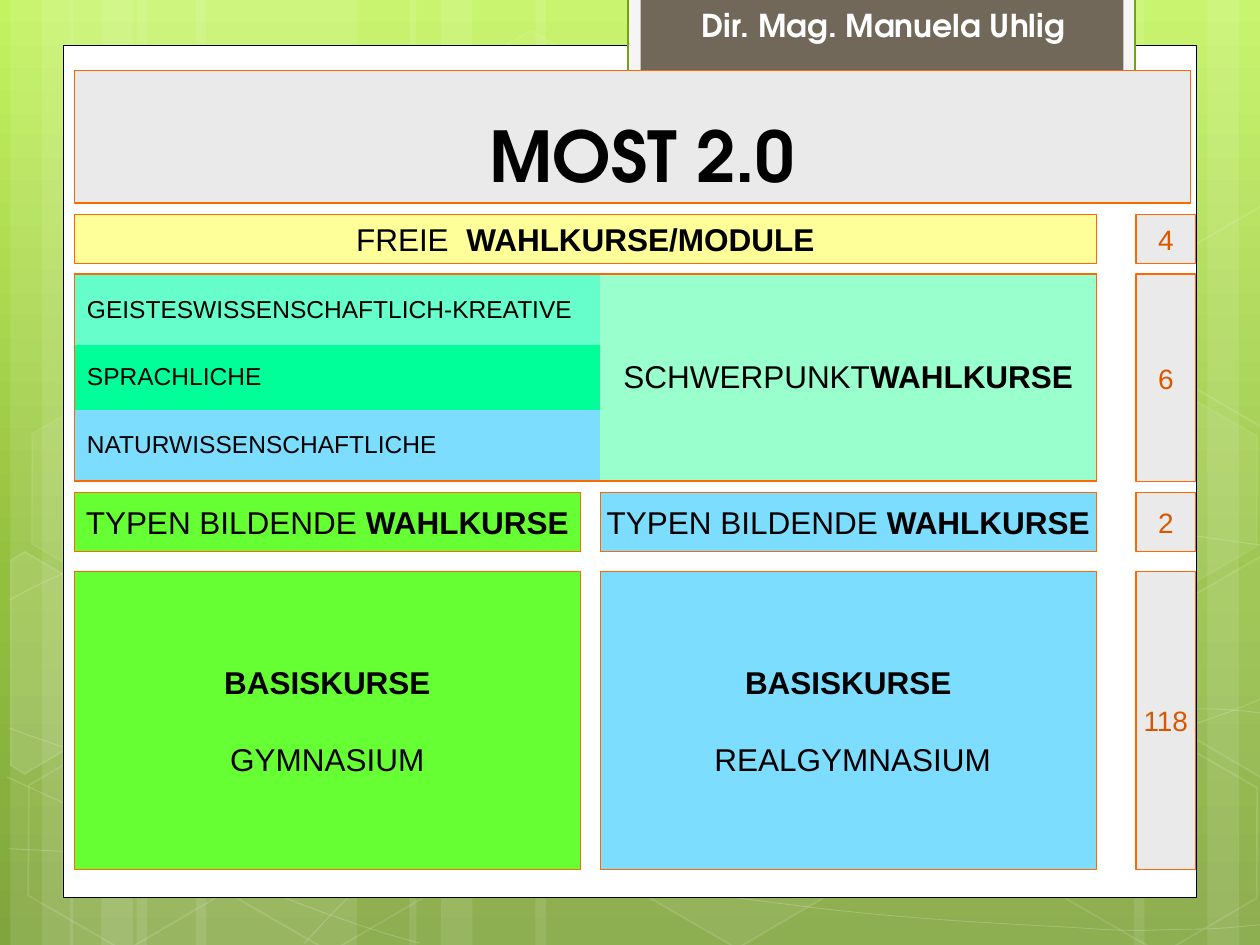
from copy import deepcopy
from math import cos, radians, sin

from lxml.etree import SubElement
from pptx import Presentation
from pptx.dml.color import RGBColor
from pptx.enum.shapes import MSO_SHAPE as SHAPE
from pptx.enum.text import MSO_ANCHOR as ANCHOR, MSO_AUTO_SIZE as AUTO_SIZE, PP_ALIGN as ALIGN
from pptx.oxml.ns import qn
from pptx.util import Pt

COLORS = {
    "white": "FFFFFF", "black": "000000", "orange": "FF6801", "rust": "D85700",
    "grey": "EAEAEA", "tab": "F5F5F5", "tab_line": "74A510", "brown": "71685A",
    "green": "66FF33", "blue": "7DDDFF", "yellow": "FFFF99", "mint": "99FFCC",
    "aqua": "66FFCC", "emerald": "00FF99",
    "sky_top": "C3F35F", "sky_middle": "93BF3F", "sky_bottom": "81A53E",
}
BACKGROUND_STOPS = [(0, "sky_top"), (0.62, "sky_middle"), (1, "sky_bottom")]
BODY_FONT, TITLE_FONT = "Arial", "TeX Gyre Adventor"

# Left, width
STREAKS = [(78, 126), (6, 36), (24, 60), (112, 126), (40, 36), (58, 60),
           (528, 126), (690, 36), (648, 60), (306, 222), (234, 36), (252, 60)]
# Start point followed by triples of Bezier points
CURVES = [
    [(5, 485), (44, 487), (83, 489), (137, 488), (191, 487), (258, 486), (330, 479),
     (402, 472), (504, 458), (570, 444), (636, 430), (703, 409), (725, 397)],
    [(5, 343), (26, 332), (47, 321), (87, 310), (128, 300), (186, 284), (250, 279),
     (314, 274), (392, 273), (471, 279), (550, 284), (682, 307), (725, 312)],
    [(4, 444), (91, 484), (178, 523), (240, 539)],
    [(5, 416), (27, 424), (50, 432), (92, 444), (134, 454), (197, 472), (257, 485),
     (317, 497), (392, 510), (452, 517), (512, 525), (576, 528), (614, 530),
     (652, 533), (662, 531), (680, 531), (699, 531), (712, 529), (725, 528)],
    [(174, 539), (187, 525), (200, 510), (217, 498), (235, 485), (259, 470), (279, 460),
     (300, 450), (312, 446), (338, 438), (364, 431), (413, 421), (438, 416),
     (464, 411), (467, 411), (490, 410), (512, 408), (547, 405), (572, 405),
     (597, 404), (638, 405), (682, 405), (699, 405), (711, 406), (724, 408)],
]
TILT = 30
# Left, top, fill opacity, line opacity
HEXAGONS = [(240.5, 26, 4, 8), (358, 424, 6, 12), (8, 425.5, 0, 12), (10, 224.5, 7, 8),
            (125.5, 426, 0, 12), (542, 326, 10, 12), (600.5, 427, 0, 12), (600.5, 226, 7, 8)]
# Outline as seen after tilting, centre of the tilt, fill opacity
CUT_HEXAGONS = [
    ([(6, 320), (14, 315), (69, 347), (68, 410), (14, 442), (6, 437)], (26, 385), 10),
    ([(667, 349), (721, 317.5), (726, 321), (726, 441), (721, 444), (667, 412.5)],
     (709, 374.5), 4),
    ([(667, 149), (721, 117.5), (727, 121), (726, 241), (721, 244), (667, 212.5)],
     (709, 173.5), 0),
]

LEFT, LEFT_WIDTH = 42.5, 289.2
RIGHT, RIGHT_WIDTH = 343, 283.5
FULL_WIDTH = RIGHT + RIGHT_WIDTH - LEFT
POINTS_LEFT, POINTS_WIDTH = 649.2, 34
# Top, height
FREE_ROW, FOCUS_ROW, TYPE_ROW, BASE_ROW = (122.5, 28.2), (156.6, 118.6), (281.3, 34), (326.6, 170.2)


def rgb(color):
    return RGBColor.from_string(COLORS[color])


def set_alpha(fill, parent, opacity):
    """Give a solid fill, found below its parent element, an opacity in percent."""
    fill.solid()
    fill.fore_color.rgb = rgb("white")
    solid = parent.find(qn("a:solidFill"))
    SubElement(solid[0], qn("a:alpha")).set("val", str(opacity * 1000))


def format_faint(shape, fill_opacity=0, line_opacity=0, line_width=1):
    shape.shadow.inherit = False
    properties = shape._element.spPr
    if fill_opacity:
        set_alpha(shape.fill, properties, fill_opacity)
    else:
        shape.fill.background()
    if line_opacity:
        shape.line.width = Pt(line_width)
        set_alpha(shape.line.fill, properties.find(qn("a:ln")), line_opacity)
    else:
        shape.line.fill.background()


def add_outline(slide, points, close):
    start, *rest = [(Pt(x), Pt(y)) for x, y in points]
    builder = slide.shapes.build_freeform(*start)
    builder.add_line_segments(rest, close=close)
    return builder.convert_to_shape()


def add_curve(slide, controls):
    """Draw an outline through the controls, then turn each three lines into one Bezier."""
    curve = add_outline(slide, controls, close=False)
    outline = curve._element.find(".//" + qn("a:path"))
    lines = outline.findall(qn("a:lnTo"))
    for first in range(0, len(lines), 3):
        bezier = SubElement(outline, qn("a:cubicBezTo"))
        for line in lines[first:first + 3]:
            bezier.append(line[0])
            outline.remove(line)
    format_faint(curve, line_opacity=20, line_width=0.5)


def add_cut_hexagon(slide, points, centre, fill_opacity):
    cx, cy = centre
    c, s = cos(radians(TILT)), sin(radians(TILT))
    upright = [(cx + (x - cx) * c + (y - cy) * s, cy - (x - cx) * s + (y - cy) * c)
               for x, y in points]
    hexagon = add_outline(slide, upright, close=True)
    hexagon.rotation = TILT
    format_faint(hexagon, fill_opacity, 12)


def add_background(slide):
    fill = slide.background.fill
    fill.gradient()
    fill.gradient_angle = 270
    stop_list = slide._element.find(".//" + qn("a:gsLst"))
    stop_list.append(deepcopy(stop_list[-1]))
    for stop, (position, color) in zip(fill.gradient_stops, BACKGROUND_STOPS):
        stop.position = position
        stop.color.rgb = rgb(color)


def add_decoration(slide):
    shapes = slide.shapes
    for left, width in STREAKS:
        streak = shapes.add_shape(SHAPE.RECTANGLE, Pt(left), 0, Pt(width), Pt(540))
        format_faint(streak, fill_opacity=10)
    for controls in CURVES:
        add_curve(slide, controls)
    for left, top, fill_opacity, line_opacity in HEXAGONS:
        hexagon = shapes.add_shape(SHAPE.HEXAGON, Pt(left), Pt(top), Pt(126), Pt(109.5))
        hexagon.adjustments[0] = 0.285
        hexagon.rotation = TILT
        format_faint(hexagon, fill_opacity, line_opacity)
    for cut_hexagon in CUT_HEXAGONS:
        add_cut_hexagon(slide, *cut_hexagon)


def write(frame, *lines, size=18, font=BODY_FONT, color="black", align=ALIGN.CENTER, gap=0):
    """Write lines, each a list of (text, bold) runs, with a gap between them."""
    for index, runs in enumerate(lines):
        paragraph = frame.add_paragraph() if index else frame.paragraphs[0]
        paragraph.alignment = align
        if index and gap:
            paragraph.space_before = Pt(gap)
        for text, bold in runs:
            run = paragraph.add_run()
            run.text = text
            run.font.name, run.font.size, run.font.bold = font, Pt(size), bold
            run.font.color.rgb = rgb(color)


def paint(shape, fill, line=None, line_width=0.75):
    shape.fill.solid()
    shape.fill.fore_color.rgb = rgb(fill)
    if line:
        shape.line.color.rgb = rgb(line)
        shape.line.width = Pt(line_width)
    else:
        shape.line.fill.background()


def add_box(slide, left, top, width, height, fill, *lines, line="orange", line_width=0.75, **style):
    box = slide.shapes.add_shape(SHAPE.RECTANGLE, Pt(left), Pt(top), Pt(width), Pt(height))
    box.shadow.inherit = False
    paint(box, fill, line, line_width)
    box.text_frame.word_wrap = False
    box.text_frame.vertical_anchor = ANCHOR.MIDDLE
    write(box.text_frame, *lines, **style)


def add_frame(slide):
    add_box(slide, 36, 26, 648, 487, "white", line="black", line_width=0.5)
    add_box(slide, 359, -1.5, 289.5, 54.5, "tab", line="tab_line", line_width=1.25)
    add_box(slide, 366, -1.5, 276, 49, "brown", line=None)


def add_title(slide):
    title = slide.shapes.title
    title.left, title.top, title.width, title.height = Pt(LEFT), Pt(40.2), Pt(638), Pt(75.9)
    paint(title, "grey", "orange")
    title.text_frame.auto_size = AUTO_SIZE.NONE
    title.text_frame.vertical_anchor = ANCHOR.BOTTOM
    write(title.text_frame, [(" MOST 2.0", True)], size=40, font=TITLE_FONT)
    slide.shapes._spTree.append(title._element)  # in front of the white panel


def set_border(cell, side, visible):
    border = SubElement(cell._tc.get_or_add_tcPr(), qn("a:ln" + side), w=str(Pt(1)))
    if visible:
        solid = SubElement(border, qn("a:solidFill"))
        SubElement(solid, qn("a:srgbClr"), val=COLORS["orange"])
    else:
        SubElement(border, qn("a:noFill"))


def add_focus_table(slide):
    subjects = [("GEISTESWISSENSCHAFTLICH-KREATIVE", "aqua", 40.8), ("SPRACHLICHE", "emerald", 36.6),
                ("NATURWISSENSCHAFTLICHE", "blue", 40.8)]
    top, height = FOCUS_ROW
    table = slide.shapes.add_table(3, 2, Pt(LEFT), Pt(top), Pt(FULL_WIDTH), Pt(height)).table
    table.columns[0].width, table.columns[1].width = Pt(RIGHT - LEFT), Pt(RIGHT_WIDTH)
    for index, (subject, fill, row_height) in enumerate(subjects):
        table.rows[index].height = Pt(row_height)
        for column, color in enumerate((fill, "mint")):
            cell = table.cell(index, column)
            edges = {"L": column == 0, "R": column == 1, "T": index == 0, "B": index == 2}
            for side, visible in edges.items():
                set_border(cell, side, visible)
            cell.fill.solid()
            cell.fill.fore_color.rgb = rgb(color)
            cell.vertical_anchor = ANCHOR.MIDDLE
        write(table.cell(index, 0).text_frame, [(subject, False)], size=14, align=ALIGN.LEFT)
    write(table.cell(1, 1).text_frame, [("SCHWERPUNKT", False), ("WAHLKURSE", True)])


def add_courses(slide):
    add_box(slide, LEFT, FREE_ROW[0], FULL_WIDTH, FREE_ROW[1], "yellow",
            [("FREIE  ", False), ("WAHLKURSE/MODULE", True)])
    add_focus_table(slide)
    for left, width, fill, school in [(LEFT, LEFT_WIDTH, "green", "GYMNASIUM"),
                                      (RIGHT, RIGHT_WIDTH, "blue", " REALGYMNASIUM")]:
        add_box(slide, left, TYPE_ROW[0], width, TYPE_ROW[1], fill,
                [("TYPEN BILDENDE ", False), ("WAHLKURSE", True)])
        add_box(slide, left, BASE_ROW[0], width, BASE_ROW[1], fill,
                [("BASISKURSE", True)], [(school, False)], gap=22)


def add_points(slide):
    rows = (FREE_ROW, FOCUS_ROW, TYPE_ROW, BASE_ROW)
    for (top, height), points in zip(rows, ("4", "6", "2", "118")):
        add_box(slide, POINTS_LEFT, top, POINTS_WIDTH, height, "grey",
                [(points, False)], size=16, color="rust")


def add_director(slide):
    director = slide.shapes.add_textbox(Pt(394), 0, Pt(224.5), Pt(29))
    director.text_frame.word_wrap = False
    write(director.text_frame, [("Dir. Mag. Manuela Uhlig", True)],
          font=TITLE_FONT, color="white", align=ALIGN.LEFT)


def main():
    deck = Presentation()
    deck.slide_width, deck.slide_height = Pt(720), Pt(540)
    slide = deck.slides.add_slide(deck.slide_layouts[5])
    for add_part in (add_background, add_decoration, add_frame, add_title,
                     add_courses, add_points, add_director):
        add_part(slide)
    deck.save("out.pptx")


if __name__ == "__main__":
    main()
